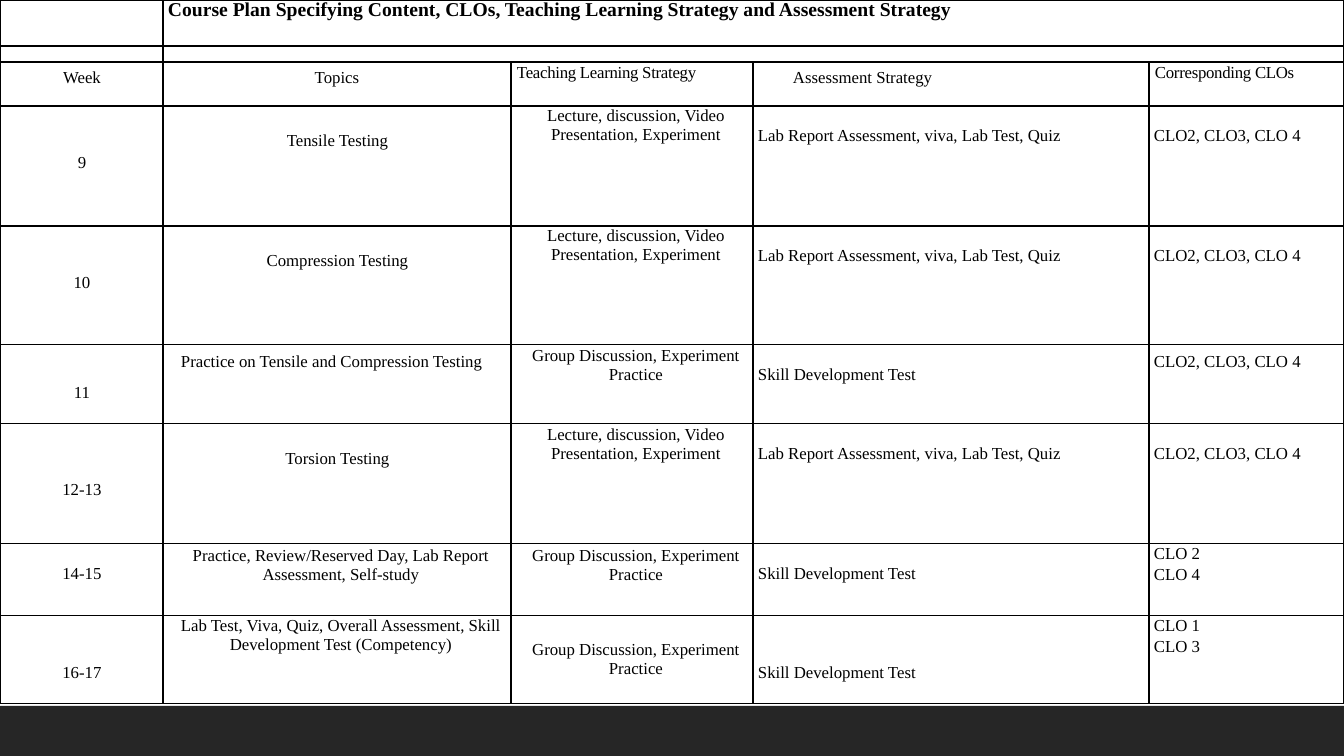
from lxml.etree import SubElement
from pptx import Presentation
from pptx.dml.color import RGBColor
from pptx.enum.shapes import MSO_SHAPE
from pptx.enum.text import PP_ALIGN
from pptx.oxml.ns import qn
from pptx.util import Emu, Pt

PX = 914400 / 100.8
BLACK = "000000"
COLUMN_WIDTHS = [163, 348, 242, 396, 195]
ROW_HEIGHTS = [46, 16, 44, 120, 119, 79, 120, 72, 88]
LEFT, CENTER = PP_ALIGN.LEFT, PP_ALIGN.CENTER

TITLE = "Course Plan Specifying Content, CLOs, Teaching Learning Strategy and Assessment Strategy"
LECTURE = "Lecture, discussion, Video Presentation, Experiment"
GROUP = "Group Discussion, Experiment Practice"
LAB_REPORT = "Lab Report Assessment, viva, Lab Test, Quiz"
SKILL_TEST = "Skill Development Test"
ALL_CLOS = "CLO2, CLO3, CLO 4"

HEADINGS = [
    ("Week", 1, 6, CENTER, 0),
    ("Topics", 0, 6, CENTER, 0),
    ("Teaching Learning Strategy", 6, 1, LEFT, -20),
    ("Assessment Strategy", 40, 6, LEFT, 0),
    ("Corresponding CLOs", 6, 1, LEFT, -20),
]
WEEK_STYLE = (1, CENTER)
TOPIC_STYLE = (1, CENTER)
STRATEGY_STYLE = (8, CENTER)
PLAIN_STYLE = (5, LEFT)
COLUMN_STYLES = [WEEK_STYLE, TOPIC_STYLE, STRATEGY_STYLE, PLAIN_STYLE, PLAIN_STYLE]
PLAN = [
    [("9", 47), ("Tensile Testing", 25), (LECTURE, 0), (LAB_REPORT, 20), (ALL_CLOS, 20)],
    [("10", 47), ("Compression Testing", 25), (LECTURE, 0), (LAB_REPORT, 20), (ALL_CLOS, 20)],
    [("11", 38), ("Practice on Tensile and Compression Testing", 7), (GROUP, 1),
     (SKILL_TEST, 20), (ALL_CLOS, 7)],
    [("12-13", 56), ("Torsion Testing", 25), (LECTURE, 1), (LAB_REPORT, 20), (ALL_CLOS, 20)],
    [("14-15", 20), ("Practice, Review/Reserved Day, Lab Report Assessment, Self-study", 2),
     (GROUP, 2), (SKILL_TEST, 20), ("CLO 2\nCLO 4", 0)],
    [("16-17", 47),
     ("Lab Test, Viva, Quiz, Overall Assessment, Skill Development Test (Competency)", 0),
     (GROUP, 24), (SKILL_TEST, 47), ("CLO 1\nCLO 3", 0)],
]


def px(length):
    """Turn a length in px into EMU."""
    return Emu(round(length * PX))


def color(value):
    """Turn a hex string into a colour."""
    return RGBColor.from_string(value)


def add_footer_band(slide):
    """Draw the dark band along the foot of the slide."""
    band = slide.shapes.add_shape(MSO_SHAPE.RECTANGLE, 0, px(706), px(1344), px(50))
    band.shadow.inherit = False
    band.fill.solid()
    band.fill.fore_color.rgb = color("262626")
    band.line.fill.background()


def prepare_cell(cell):
    """Give a cell black borders, no fill, no insets and a small empty line."""
    properties = cell._tc.get_or_add_tcPr()
    for side in ("a:lnL", "a:lnR", "a:lnT", "a:lnB"):
        border = SubElement(properties, qn(side), w=str(Pt(1)))
        SubElement(SubElement(border, qn("a:solidFill")), qn("a:srgbClr"), val=BLACK)
    cell.fill.background()
    cell.margin_left = cell.margin_right = cell.margin_top = cell.margin_bottom = 0
    cell.text_frame.paragraphs[0]._p.get_or_add_endParaRPr().set("sz", "800")


def write_cell(cell, text, left, top, align, size=12, bold=False, tracking=0):
    """Write one cell's text with its insets and format."""
    cell.margin_left, cell.margin_top = px(left), px(top)
    cell.text_frame.text = text
    for index, paragraph in enumerate(cell.text_frame.paragraphs):
        paragraph.alignment = align
        paragraph.line_spacing = Pt(13.8)
        if index:
            paragraph.space_before = Pt(1.4)
        for run in paragraph.runs:
            run.font.name = "Times New Roman"
            run.font.size = Pt(size)
            run.font.bold = bold
            run.font.color.rgb = color(BLACK)
            if tracking:
                run.font._element.set("spc", str(tracking))


def add_plan_grid(slide):
    """Add the empty course plan table and return it."""
    grid = slide.shapes.add_table(
        len(ROW_HEIGHTS), len(COLUMN_WIDTHS), 0, 0,
        px(sum(COLUMN_WIDTHS)), px(sum(ROW_HEIGHTS))).table
    grid.first_row = grid.horz_banding = False
    for column, width in zip(grid.columns, COLUMN_WIDTHS):
        column.width = px(width)
    for row, height in zip(grid.rows, ROW_HEIGHTS):
        row.height = px(height)
    for cell in grid.iter_cells():
        prepare_cell(cell)
    for row in range(2):
        grid.cell(row, 1).merge(grid.cell(row, 4))
    return grid


def main():
    """Build the course plan slide."""
    deck = Presentation()
    deck.slide_width, deck.slide_height = px(1344), px(756)
    slide = deck.slides.add_slide(deck.slide_layouts[6])
    add_footer_band(slide)
    grid = add_plan_grid(slide)
    write_cell(grid.cell(0, 1), TITLE, 5, 1, LEFT, size=14, bold=True)
    for column, (heading, left, top, align, tracking) in enumerate(HEADINGS):
        write_cell(grid.cell(2, column), heading, left, top, align, tracking=tracking)
    for row, entries in enumerate(PLAN, start=3):
        for column, (text, top) in enumerate(entries):
            left, align = COLUMN_STYLES[column]
            write_cell(grid.cell(row, column), text, left, top, align)
    grid.cell(5, 1).margin_left = px(18)
    grid.cell(5, 1).text_frame.paragraphs[0].alignment = LEFT
    for row in (7, 8):
        grid.cell(row, 1).margin_left = px(8)
    deck.save("out.pptx")


if __name__ == "__main__":
    main()
